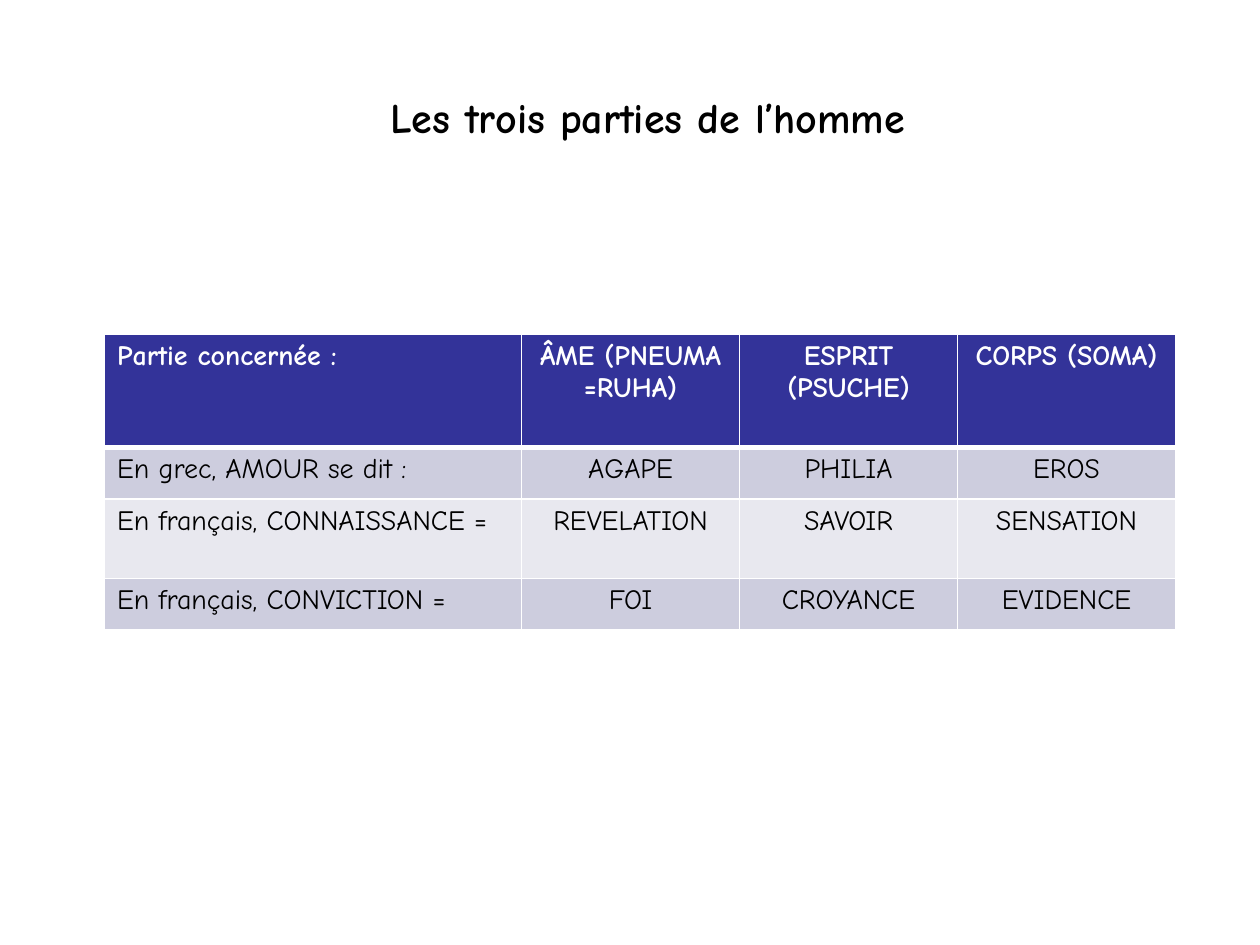
from dataclasses import dataclass

from pptx import Presentation
from pptx import util as u
from pptx.dml.color import RGBColor
from pptx.enum import text
from pptx.oxml import parse_xml
from pptx.oxml.ns import nsdecls


@dataclass(frozen=True)
class Theme:
    font: str = "Comic Neue"
    title_size: int = 24
    cell_size: int = 16
    black: str = "000000"
    white: str = "FFFFFF"
    header: str = "333399"
    bands: tuple = ("E8E8EF", "CDCDDE")


theme = Theme()


def write(frame, content, size, color, bold=False, align=text.PP_ALIGN.CENTER):
    paragraph = frame.paragraphs[0]
    paragraph.alignment = align
    run = paragraph.add_run()
    run.text = content
    run.font.name = theme.font
    run.font.size = u.Pt(size)
    run.font.bold = bold
    run.font.color.rgb = RGBColor.from_string(color)


def add_border(cell, side, points):
    cell._tc.get_or_add_tcPr().append(parse_xml(
        f'<a:ln{side} {nsdecls("a")} w="{int(u.Pt(points))}"><a:solidFill>'
        f'<a:srgbClr val="{theme.white}"/></a:solidFill></a:ln{side}>'
    ))


presentation = Presentation()
presentation.slide_width = u.Inches(10)
presentation.slide_height = u.Inches(7.5)
slide = presentation.slides.add_slide(presentation.slide_layouts[5])

title = slide.shapes.title
title.left, title.top = u.Inches(0.5), u.Inches(0.3)
title.width, title.height = u.Inches(9), u.Inches(1.25)
title.text_frame.vertical_anchor = text.MSO_ANCHOR.MIDDLE
title.text_frame.margin_left = u.Inches(0.38)
write(title.text_frame, "Les trois parties de l’homme", theme.title_size, theme.black, bold=True)

rows = [
    ("Partie concernée :", "ÂME (PNEUMA =RUHA)", "ESPRIT (PSUCHE)", "CORPS (SOMA)"),
    ("En grec, AMOUR se dit :", "AGAPE", "PHILIA", "EROS"),
    ("En français, CONNAISSANCE =", "REVELATION", "SAVOIR", "SENSATION"),
    ("En français, CONVICTION =", "FOI", "CROYANCE", "EVIDENCE"),
]
row_heights = [0.9, 0.41, 0.63, 0.41]
column_widths = [3.31, 1.73, 1.73, 1.73]

table = slide.shapes.add_table(
    len(rows), len(column_widths),
    u.Inches(0.83), u.Inches(2.65), u.Inches(sum(column_widths)), u.Inches(sum(row_heights)),
).table
for column, width in zip(table.columns, column_widths):
    column.width = u.Inches(width)

for row_index, (labels, height) in enumerate(zip(rows, row_heights)):
    table.rows[row_index].height = u.Inches(height)
    is_header = row_index == 0
    fill = theme.header if is_header else theme.bands[row_index % 2]
    borders = {"L": 1, "R": 1, "T": 3 if row_index == 1 else 1, "B": 3 if is_header else 1}
    for column_index, label in enumerate(labels):
        cell = table.cell(row_index, column_index)
        for side, points in borders.items():
            add_border(cell, side, points)
        cell.fill.solid()
        cell.fill.fore_color.rgb = RGBColor.from_string(fill)
        write(
            cell.text_frame, label, theme.cell_size,
            theme.white if is_header else theme.black,
            bold=is_header,
            align=text.PP_ALIGN.CENTER if column_index else text.PP_ALIGN.LEFT,
        )

presentation.save("out.pptx")
